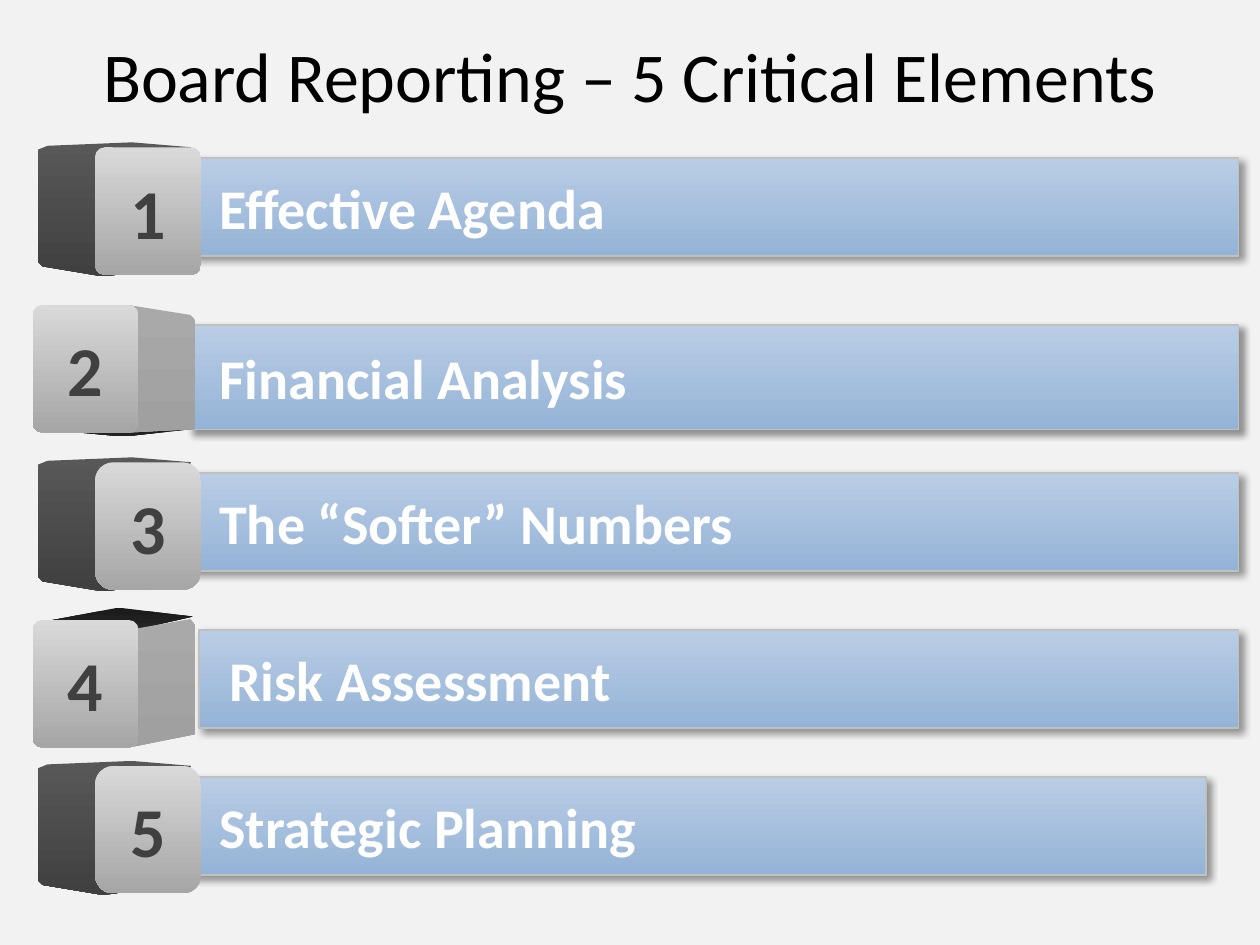
from pptx import Presentation
from pptx.dml.color import RGBColor
from pptx.enum.shapes import MSO_SHAPE as Shape
from pptx.enum.text import MSO_ANCHOR as Anchor, PP_ALIGN as Align
from pptx.oxml import parse_xml
from pptx.oxml.ns import nsdecls
from pptx.util import Cm, Pt

BACKGROUND = RGBColor(0xF2, 0xF2, 0xF2)
BLACK = RGBColor(0, 0, 0)
WHITE = RGBColor(0xFF, 0xFF, 0xFF)
NUMBER_GRAY = RGBColor(0x40, 0x40, 0x40)
BAR_LINE = RGBColor(0xC0, 0xC0, 0xC0)
BAR_COLORS = RGBColor(0xB9, 0xCD, 0xE5), RGBColor(0x95, 0xB3, 0xD7)
FRONT_COLORS = RGBColor(0xD9, 0xD9, 0xD9), RGBColor(0xA6, 0xA6, 0xA6)
DARK_COLORS = RGBColor(0x58, 0x58, 0x58), RGBColor(0x40, 0x40, 0x40)
LIGHT_COLORS = RGBColor(0xA9, 0xA9, 0xA9), RGBColor(0xA0, 0xA0, 0xA0)
EDGE_COLORS = RGBColor(0x1A, 0x1A, 0x1A), RGBColor(0x26, 0x26, 0x26)

TITLE_FONT = {"name": "Calibri", "size": Pt(40), "bold": False}
BAR_FONT = {"name": "Calibri", "size": Pt(32), "bold": True}
NUMBER_FONT = {"name": "Calibri", "size": Pt(40), "bold": True}

LEFT_FACES = [
    (DARK_COLORS, [(0, 0.05), (0.2, -0.03), (1.9, -0.1), (3.1, 0),
                   (1.6, 2.57), (1.3, 2.6), (0.1, 2.4), (0, 2.3)]),
]
RIGHT_FACES = [
    (EDGE_COLORS, [(0.1, 2.5), (3.2, 2.5), (1.8, 2.65)]),
    (LIGHT_COLORS, [(1.9, 0), (3.15, 0.2), (3.25, 0.3), (3.25, 2.5), (1.9, 2.57)]),
]
RAISED_FACES = [
    (EDGE_COLORS, [(0.1, 0.05), (1.7, -0.25), (3.2, -0.07), (2, 0.2)]),
    (LIGHT_COLORS, [(1.9, 0.2), (3.15, -0.02), (3.25, 0.1), (3.25, 2.3), (1.9, 2.57)]),
]
LEFT_CUBE = (0.76, 1.16)
RIGHT_CUBE = (0.69, -0.03)

BAR_LEFT, BAR_RIGHT, BAR_HEIGHT = 3.81, 24.97, 1.98
ELEMENTS = [
    ("Effective Agenda", (BAR_LEFT, 3.18, BAR_RIGHT, BAR_HEIGHT), 2.97, LEFT_CUBE, LEFT_FACES, 0.09),
    ("Financial Analysis", (BAR_LEFT, 6.55, BAR_RIGHT, 2.11), 6.15, RIGHT_CUBE, RIGHT_FACES, 0.09),
    ("The “Softer” Numbers", (BAR_LEFT, 9.53, BAR_RIGHT, BAR_HEIGHT), 9.32, LEFT_CUBE, LEFT_FACES, 0.17),
    ("Risk Assessment", (4.01, 12.7, BAR_RIGHT, BAR_HEIGHT), 12.5, RIGHT_CUBE, RAISED_FACES, 0.09),
    ("Strategic Planning", (BAR_LEFT, 15.66, 24.31, BAR_HEIGHT), 15.44, LEFT_CUBE, LEFT_FACES, 0.17),
]


def set_attributes(target, values):
    for name, value in values.items():
        setattr(target, name, value)


def fill_gradient(shape, colors):
    shape.shadow.inherit = False
    shape.fill.gradient()
    shape.fill.gradient_angle = 270
    for position, (stop, color) in enumerate(zip(shape.fill.gradient_stops, colors)):
        stop.position = position
        stop.color.rgb = color


def write_text(shape, text, font, color, align, margins):
    frame = shape.text_frame
    set_attributes(frame, {"word_wrap": True, "vertical_anchor": Anchor.MIDDLE, **margins})
    paragraph = frame.paragraphs[0]
    paragraph.text = text
    paragraph.alignment = align
    set_attributes(paragraph.font, font)
    paragraph.font.color.rgb = color


def add_shadow(shape):
    properties = shape._element.spPr
    properties.remove(properties.find("{*}effectLst"))
    properties.append(parse_xml(
        f'<a:effectLst {nsdecls("a")}><a:outerShdw blurRad="{Pt(4)}" dist="{Pt(3)}" '
        'dir="2700000" algn="tl" rotWithShape="0"><a:srgbClr val="000000">'
        '<a:alpha val="40000"/></a:srgbClr></a:outerShdw></a:effectLst>'))


def add_title(slide, left, top, width, height):
    title = slide.shapes.title
    set_attributes(title, {"left": Cm(left), "top": Cm(top),
                           "width": Cm(width), "height": Cm(height)})
    write_text(title, "Board Reporting – 5 Critical Elements", TITLE_FONT, BLACK, Align.CENTER, {})


def add_bar(slide, text, left, top, right, height):
    bar = slide.shapes.add_shape(Shape.RECTANGLE, Cm(left), Cm(top), Cm(right - left), Cm(height))
    fill_gradient(bar, BAR_COLORS)
    bar.line.color.rgb = BAR_LINE
    bar.line.width = Pt(1)
    add_shadow(bar)
    margins = {"margin_left": Cm(0.61), "margin_right": Cm(0.61),
               "margin_top": Cm(0.1), "margin_bottom": Cm(0.1)}
    write_text(bar, text, BAR_FONT, WHITE, Align.LEFT, margins)


def add_cube(slide, number, left, top, front_offset, faces, rounding):
    for colors, points in faces:
        corners = [(Cm(left + x), Cm(top + y)) for x, y in points]
        builder = slide.shapes.build_freeform(*corners[0])
        builder.add_line_segments(corners[1:], close=True)
        face = builder.convert_to_shape()
        fill_gradient(face, colors)
        face.line.fill.background()
    front = slide.shapes.add_shape(Shape.ROUNDED_RECTANGLE, Cm(left + front_offset), Cm(top),
                                   Cm(2.13), Cm(2.57))
    front.adjustments[0] = rounding
    fill_gradient(front, FRONT_COLORS)
    front.line.fill.background()
    write_text(front, str(number), NUMBER_FONT, NUMBER_GRAY, Align.CENTER, {})


def main():
    presentation = Presentation()
    presentation.slide_width = Cm(25.4)
    presentation.slide_height = Cm(19.05)
    slide = presentation.slides.add_slide(presentation.slide_layouts[5])
    slide.background.fill.solid()
    slide.background.fill.fore_color.rgb = BACKGROUND
    add_title(slide, 0.9, 0.66, 23.6, 1.7)
    for number, (text, bar, top, (left, offset), faces, rounding) in enumerate(ELEMENTS, 1):
        add_bar(slide, text, *bar)
        add_cube(slide, number, left, top, offset, faces, rounding)
    presentation.save("out.pptx")


if __name__ == "__main__":
    main()
